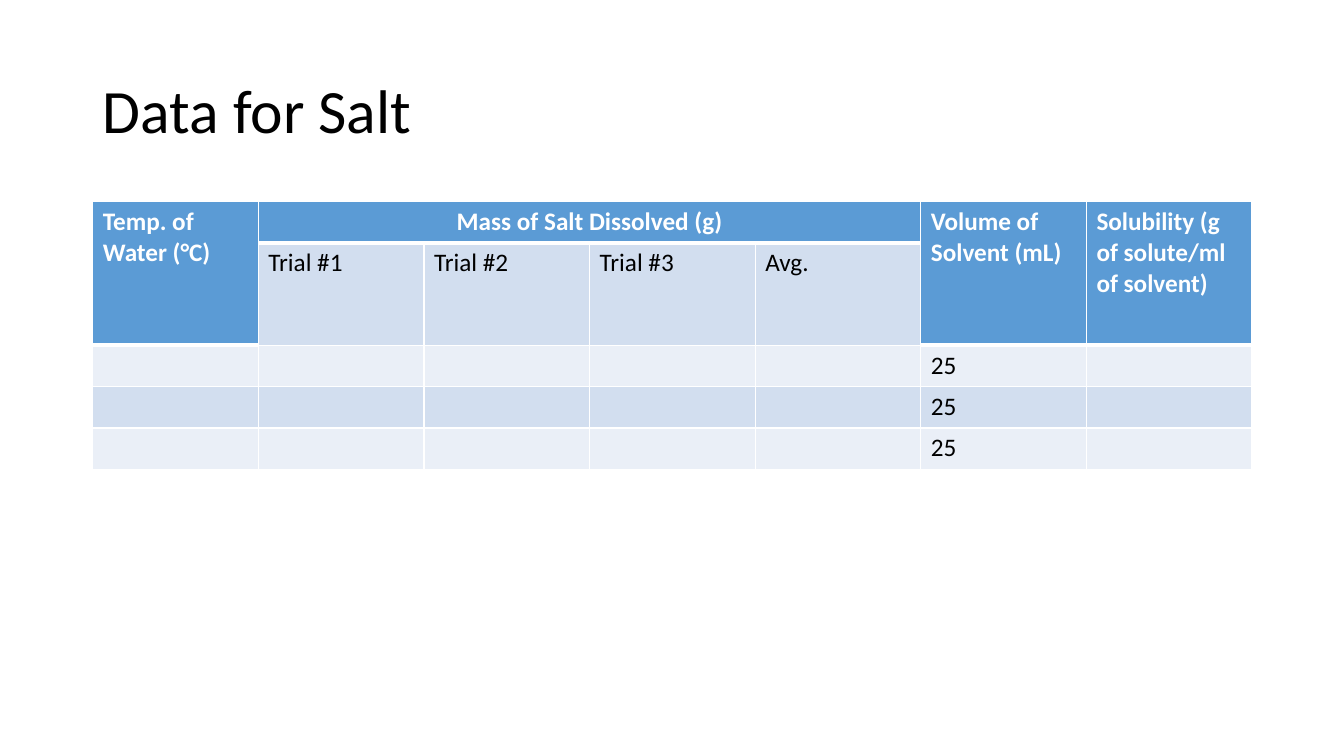
from dataclasses import dataclass, field

from lxml import etree
from pptx import Presentation
from pptx import util as u
from pptx.dml.color import RGBColor
from pptx.enum import text
from pptx.oxml import ns


@dataclass(frozen=True)
class Theme:
    font: str = "Calibri"
    title_size: int = 44
    table_size: int = 18
    ink: str = "000000"
    white: str = "FFFFFF"
    header: str = "5B9BD5"
    bands: tuple[str, str] = ("EAEFF7", "D2DEEF")
    thin: int = 1
    thick: int = 3


@dataclass(frozen=True)
class TableCell:
    row: int
    column: int
    words: str
    rows: int = 1
    columns: int = 1
    header: bool = False
    paragraph_format: dict = field(default_factory=dict)


THEME = Theme()
LEFT, WIDTH = 0.92, 11.5
ROWS, COLUMNS, ROW_HEIGHT = 5, 7, 0.41

CELLS = [
    TableCell(0, 0, "Temp. of Water (°C)", rows=2, header=True),
    TableCell(0, 1, "Mass of Salt Dissolved (g)", columns=4, header=True,
              paragraph_format={"alignment": text.PP_ALIGN.CENTER}),
    TableCell(0, 5, "Volume of Solvent (mL)", rows=2, header=True),
    TableCell(0, 6, "Solubility (g of solute/ml of solvent)", rows=2, header=True),
    *(TableCell(1, column, words)
      for column, words in enumerate(["Trial #1", "Trial #2", "Trial #3", "Avg."], 1)),
    *(TableCell(row, 5, "25") for row in range(2, ROWS)),
]


def apply(target, values: dict) -> None:
    for name, value in values.items():
        setattr(target, name, value)


def format_font(font, size: int, color: str, bold: bool = False) -> None:
    apply(font, {"name": THEME.font, "size": u.Pt(size), "bold": bold})
    font.color.rgb = RGBColor.from_string(color)


def set_borders(cell, top: int, bottom: int) -> None:
    properties = cell._tc.get_or_add_tcPr()
    weights = {"lnL": THEME.thin, "lnR": THEME.thin, "lnT": top, "lnB": bottom}
    for position, (edge, weight) in enumerate(weights.items()):
        line = etree.Element(ns.qn(f"a:{edge}"), w=str(u.Pt(weight)))
        fill = etree.SubElement(line, ns.qn("a:solidFill"))
        etree.SubElement(fill, ns.qn("a:srgbClr"), val=THEME.white)
        properties.insert(position, line)


def add_title(slide, words: str) -> None:
    title = slide.shapes.title
    apply(title, {"left": u.Inches(LEFT), "top": u.Inches(0.4),
                  "width": u.Inches(WIDTH), "height": u.Inches(1.45)})
    title.text_frame.text = words
    title.text_frame.vertical_anchor = text.MSO_ANCHOR.MIDDLE
    paragraph = title.text_frame.paragraphs[0]
    apply(paragraph, {"alignment": text.PP_ALIGN.LEFT, "line_spacing": 0.9})
    format_font(paragraph.runs[0].font, THEME.title_size, THEME.ink)


def add_data_table(slide) -> None:
    table = slide.shapes.add_table(
        ROWS, COLUMNS, u.Inches(LEFT), u.Inches(2),
        u.Inches(WIDTH), u.Inches(ROWS * ROW_HEIGHT)).table

    # Header area and the heavy rule beneath it
    header_area = {(item.row + down, item.column + across)
                   for item in CELLS if item.header
                   for down in range(item.rows) for across in range(item.columns)}

    def rule_below(row: int, column: int) -> int:
        ends_header = (row, column) in header_area and (row + 1, column) not in header_area
        return THEME.thick if ends_header else THEME.thin

    # Fills, borders and base type for the whole grid
    for row in range(ROWS):
        for column in range(COLUMNS):
            cell = table.cell(row, column)
            color = THEME.header if (row, column) in header_area else THEME.bands[row % 2]
            cell.fill.solid()
            cell.fill.fore_color.rgb = RGBColor.from_string(color)
            set_borders(cell, rule_below(row - 1, column), rule_below(row, column))
            format_font(cell.text_frame.paragraphs[0].font, THEME.table_size, THEME.ink)

    # Wording and merged headings
    for item in CELLS:
        cell = table.cell(item.row, item.column)
        if item.rows * item.columns > 1:
            cell.merge(table.cell(item.row + item.rows - 1, item.column + item.columns - 1))
        paragraph = cell.text_frame.paragraphs[0]
        apply(paragraph, item.paragraph_format)
        run = paragraph.add_run()
        run.text = item.words
        format_font(run.font, THEME.table_size,
                    THEME.white if item.header else THEME.ink, item.header)


def main() -> None:
    presentation = Presentation()
    apply(presentation, {"slide_width": u.Inches(13.33), "slide_height": u.Inches(7.5)})
    slide = presentation.slides.add_slide(presentation.slide_layouts.get_by_name("Title Only"))
    add_title(slide, "Data for Salt")
    add_data_table(slide)
    presentation.save("out.pptx")


if __name__ == "__main__":
    main()
